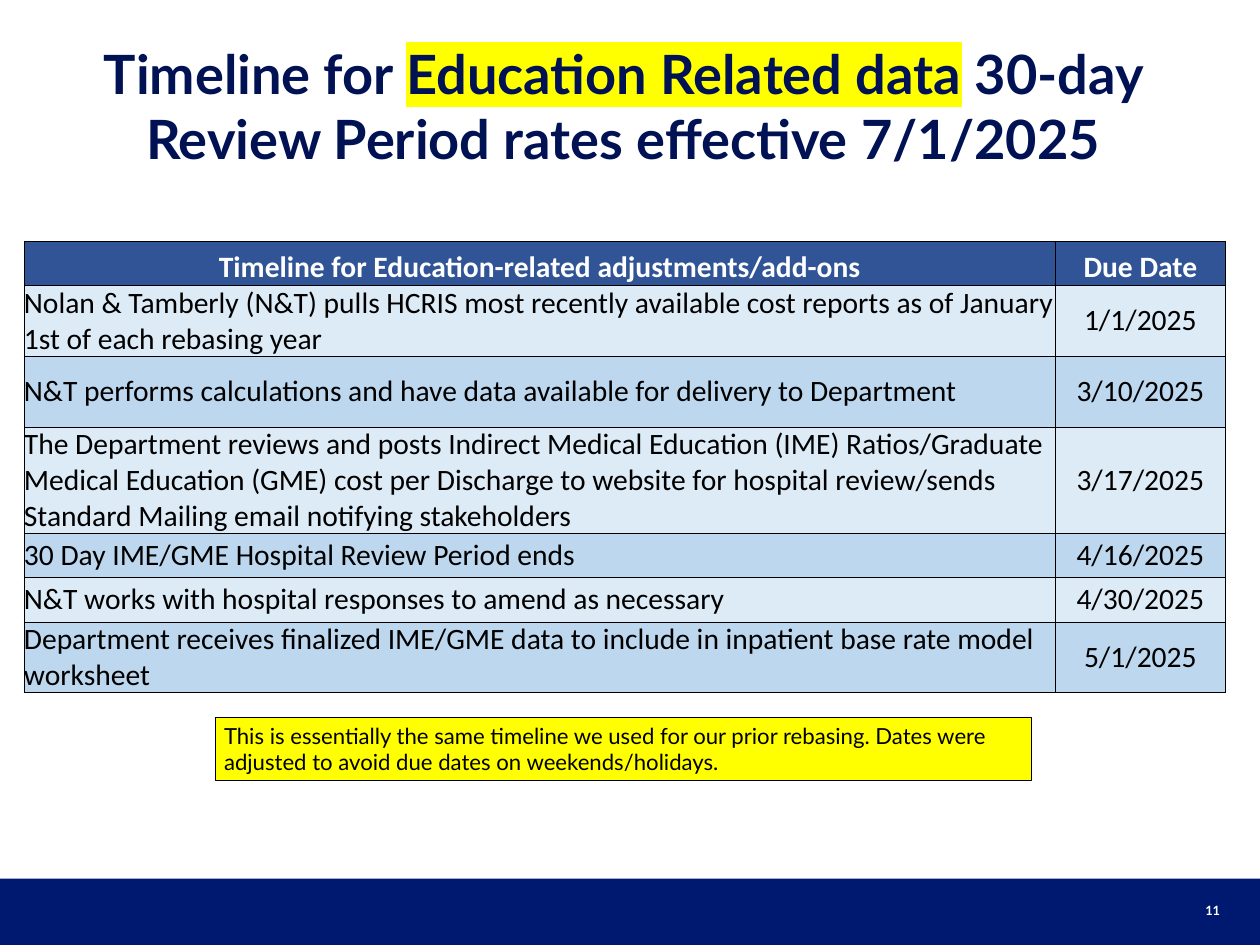
from lxml import etree
from pptx import Presentation
from pptx.dml.color import RGBColor
from pptx.enum.shapes import MSO_SHAPE as Preset
from pptx.enum.text import MSO_ANCHOR as Anchor, PP_ALIGN as Align
from pptx.oxml.ns import qn
from pptx.util import Inches, Pt

NAVY = RGBColor(0x00, 0x19, 0x70)
TITLE_NAVY = RGBColor(0x00, 0x12, 0x54)
HEADER_BLUE = RGBColor(0x30, 0x54, 0x96)
LIGHT_BLUE = RGBColor(0xDD, 0xEB, 0xF7)
MID_BLUE = RGBColor(0xBD, 0xD7, 0xEE)
YELLOW = RGBColor(0xFF, 0xFF, 0x00)
WHITE = RGBColor(0xFF, 0xFF, 0xFF)
BLACK = RGBColor(0x00, 0x00, 0x00)

COLUMN_WIDTHS = (11.64, 1.92)
ROW_HEIGHTS = (0.5, 0.8, 0.8, 1.2, 0.5, 0.5, 0.8)
TIMELINE = (
    ("Timeline for Education-related adjustments/add-ons", "Due Date"),
    ("Nolan & Tamberly (N&T) pulls HCRIS most recently available cost reports "
     "as of January 1st of each rebasing year", "1/1/2025"),
    ("N&T performs calculations and have data available for delivery to Department",
     "3/10/2025"),
    ("The Department reviews and posts Indirect Medical Education (IME) Ratios/Graduate "
     "Medical Education (GME) cost per Discharge to website for hospital review/sends "
     "Standard Mailing email notifying stakeholders", "3/17/2025"),
    ("30 Day IME/GME Hospital Review Period ends", "4/16/2025"),
    ("N&T works with hospital responses to amend as necessary", "4/30/2025"),
    ("Department receives finalized IME/GME data to include in inpatient base rate "
     "model worksheet", "5/1/2025"),
)


def highlight(run, color):
    mark = etree.Element(qn("a:highlight"))
    etree.SubElement(mark, qn("a:srgbClr")).set("val", str(color))
    run.font._element.find(qn("a:latin")).addprevious(mark)


def write(frame, *parts, size, color, font="Lato", bold=False, align=Align.LEFT,
          marked=None):
    paragraph = frame.paragraphs[0]
    paragraph.alignment = align
    for part in parts:
        run = paragraph.add_run()
        run.text = part
        run.font.size = Pt(size)
        run.font.name = font
        run.font.bold = bold
        run.font.color.rgb = color
        if part == marked:
            highlight(run, YELLOW)


def border(cell, color, width):
    properties = cell._tc.get_or_add_tcPr()
    for side in ("lnL", "lnR", "lnT", "lnB"):
        line = etree.SubElement(properties, qn(f"a:{side}"), w=str(Pt(width)))
        fill = etree.SubElement(line, qn("a:solidFill"))
        etree.SubElement(fill, qn("a:srgbClr")).set("val", str(color))


class TimelineSlide:
    def __init__(self, deck):
        self.slide = deck.slides.add_slide(deck.slide_layouts[6])

    def box(self, left, top, width, height, fill, line=None):
        shape = self.slide.shapes.add_shape(
            Preset.RECTANGLE, Inches(left), Inches(top), Inches(width), Inches(height))
        shape.shadow.inherit = False
        shape.fill.solid()
        shape.fill.fore_color.rgb = fill
        if line is None:
            shape.line.fill.background()
        else:
            shape.line.color.rgb = line
            shape.line.width = Pt(0.75)
        return shape.text_frame

    def text(self, left, top, width, height, *parts, inset=(0, 0), **style):
        frame = self.slide.shapes.add_textbox(
            Inches(left), Inches(top), Inches(width), Inches(height)).text_frame
        frame.word_wrap = True
        frame.vertical_anchor = Anchor.MIDDLE
        frame.margin_left = frame.margin_right = Inches(inset[0])
        frame.margin_top = frame.margin_bottom = Inches(inset[1])
        write(frame, *parts, **style)

    def table(self, left, top, rows):
        table = self.slide.shapes.add_table(
            len(rows), len(COLUMN_WIDTHS), Inches(left), Inches(top),
            Inches(sum(COLUMN_WIDTHS)), Inches(sum(ROW_HEIGHTS))).table
        for column, width in zip(table.columns, COLUMN_WIDTHS):
            column.width = Inches(width)
        for row, height in zip(table.rows, ROW_HEIGHTS):
            row.height = Inches(height)
        for r, entries in enumerate(rows):
            header = r == 0
            fill = HEADER_BLUE if header else (MID_BLUE, LIGHT_BLUE)[r % 2]
            for c, entry in enumerate(entries):
                cell = table.cell(r, c)
                cell.margin_left = cell.margin_right = 0
                cell.margin_top = cell.margin_bottom = 0
                cell.vertical_anchor = Anchor.BOTTOM if header else Anchor.MIDDLE
                border(cell, BLACK, 0.5)
                cell.fill.solid()
                cell.fill.fore_color.rgb = fill
                write(cell.text_frame, entry, size=24, font="Calibri", bold=header,
                      color=WHITE if header else BLACK,
                      align=Align.CENTER if header or c == 1 else Align.LEFT)


def main():
    deck = Presentation()
    deck.slide_width, deck.slide_height = Inches(14.22), Inches(10.67)
    page = TimelineSlide(deck)

    page.box(0, 9.92, 14.22, 0.75, NAVY)
    subject = "Education Related data"
    page.text(0.27, 0.43, 13.53, 1.53, "Timeline for ", subject,
              " 30-day Review Period rates effective 7/1/2025",
              size=44, color=TITLE_NAVY, bold=True, align=Align.CENTER, marked=subject)
    page.table(0.27, 2.72, TIMELINE)

    note = page.box(2.43, 8.1, 9.21, 0.71, YELLOW, BLACK)
    note.word_wrap = True
    note.vertical_anchor = Anchor.MIDDLE
    write(note, "This is essentially the same timeline we used for our prior rebasing. "
          "Dates were adjusted to avoid due dates on weekends/holidays.",
          size=18, color=BLACK)

    page.text(11.49, 9.99, 2.35, 0.57, "11", inset=(0.07, 0.04),
              size=10.4, color=WHITE, bold=True, align=Align.RIGHT)
    deck.save("out.pptx")


if __name__ == "__main__":
    main()
